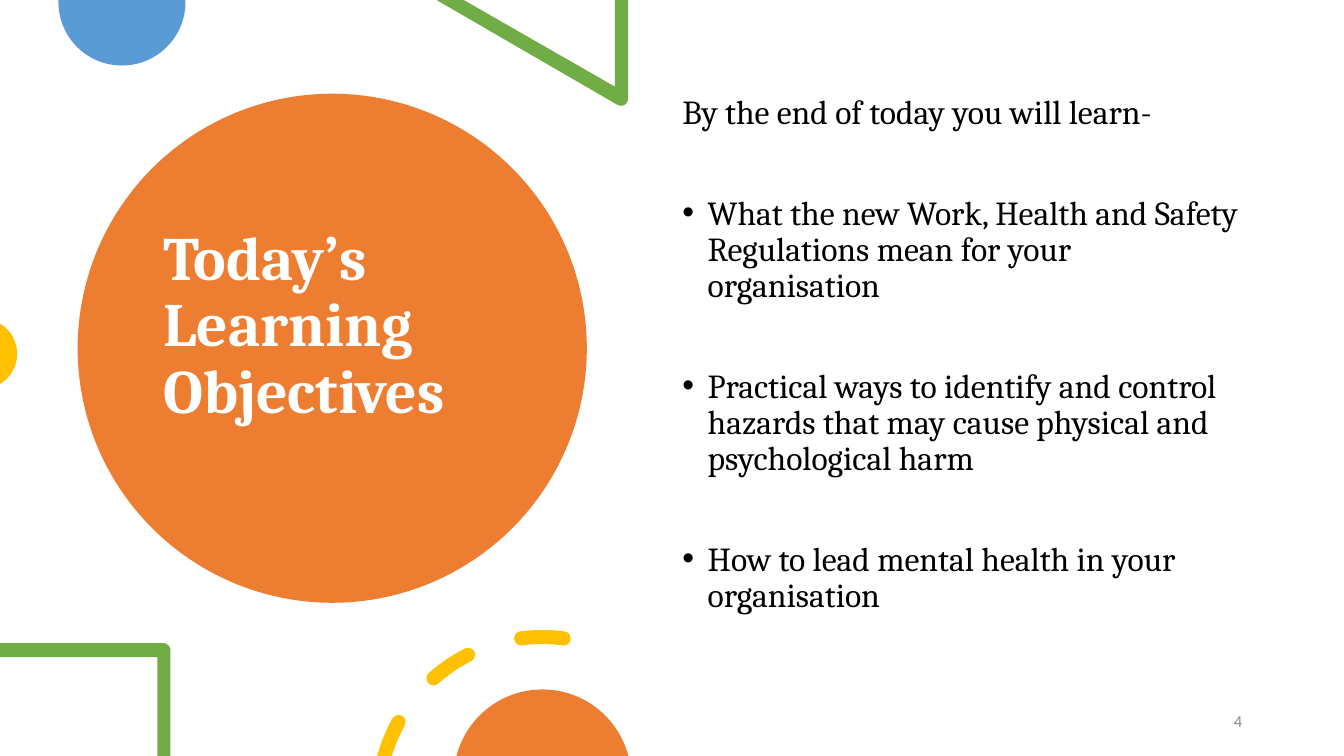
from dataclasses import dataclass
from math import cos, radians, sin, tan

from lxml import etree
from pptx import Presentation
from pptx import util as u
from pptx.dml.color import RGBColor
from pptx.enum import shapes, text
from pptx.oxml.ns import qn

COLUMNS, ROWS = 13.33, 7.5
CELL = u.Inches(1)


@dataclass(frozen=True)
class Theme:
    """Colours, fonts and type sizes of the slide."""
    orange: str = "ED7D31"
    blue: str = "5B9BD5"
    green: str = "70AD47"
    yellow: str = "FFC000"
    white: str = "FFFFFF"
    black: str = "000000"
    grey: str = "8C8C8C"
    serif: str = "Cambria"
    sans: str = "Calibri"
    title: int = 44
    body: int = 24
    number: int = 12


THEME = Theme()


def cells(*counts):
    """Turn grid counts into slide lengths."""
    return [round(count * CELL) for count in counts]


def paint(shape, colour):
    """Give a shape a plain fill with no line or shadow."""
    shape.shadow.inherit = False
    shape.fill.solid()
    shape.fill.fore_color.rgb = RGBColor.from_string(colour)
    shape.line.fill.background()


def polar(centre, radius, angle, lead=0):
    """Find a point on a circle, moved along its tangent by a share of the radius."""
    turn = radians(angle)
    return (centre[0] + radius * (cos(turn) - lead * sin(turn)),
            centre[1] + radius * (sin(turn) + lead * cos(turn)))


def arc(centre, radius, start, end):
    """List a start point and Bezier curves that split where the circle meets its axes."""
    low, high = sorted((start, end))
    splits = [angle for angle in range(-360, 721, 90) if low < angle < high]
    angles = sorted([start, *splits, end], reverse=start > end)
    items = [polar(centre, radius, start)]
    for first, last in zip(angles, angles[1:]):
        lead = 4 / 3 * tan(radians(last - first) / 4)
        items.append([polar(centre, radius, first, lead),
                      polar(centre, radius, last, -lead),
                      polar(centre, radius, last)])
    return items


def outline(page, box, contours, colour):
    """Draw closed contours of points and curves, relative to the box, as one shape."""
    left, top = box[:2]
    builder = None
    for start, *items in contours:
        origin = cells(left + start[0], top + start[1])
        if builder is None:
            builder = page.shapes.build_freeform(*origin)
        else:
            builder.move_to(*origin)
        points = [point for item in items
                  for point in (item if isinstance(item, list) else [item])]
        builder.add_line_segments([cells(left + x, top + y) for x, y in points], close=True)
    shape = builder.convert_to_shape()
    track = next(shape._element.iter(qn("a:path")))
    lines = iter(track.findall(qn("a:lnTo")))
    for item in (item for contour in contours for item in contour[1:]):
        line = next(lines)
        if isinstance(item, list):
            curve = etree.Element(qn("a:cubicBezTo"))
            line.addprevious(curve)
            for part in (line, next(lines), next(lines)):
                curve.append(part[0])
                track.remove(part)
    paint(shape, colour)


def dash(centre, radius, width, start, end):
    """Outline one curved dash with round ends."""
    half = width / 2
    return (cut_dash(centre, radius, width, start, start, end)
            + arc(polar(centre, radius, start), half, start + 180, start + 360)[1:])


def cut_dash(centre, radius, width, outer_start, inner_start, end):
    """Outline a curved dash with a round end and an open start."""
    half = width / 2
    return (arc(centre, radius + half, outer_start, end)
            + arc(polar(centre, radius, end), half, end, end + 180)[1:]
            + arc(centre, radius - half, end, inner_start)[1:])


def text_box(page, box, lines, font, size, colour, anchor=text.MSO_ANCHOR.TOP):
    """Place wrapped paragraphs in a box and return its text frame."""
    frame = page.shapes.add_textbox(*cells(*box)).text_frame
    frame.word_wrap = True
    frame.vertical_anchor = anchor
    for index, line in enumerate(lines):
        para = frame.paragraphs[0] if index == 0 else frame.add_paragraph()
        para.text = line
        para.font.name = font
        para.font.size = u.Pt(size)
        para.font.color.rgb = RGBColor.from_string(colour)
    return frame


def decorations(page, box):
    """Draw the cut-off shapes around the edges of the left half."""
    height = box[3]
    outline(page, box, [[(1.84, 0)] + arc((1.21, 0.02), 0.63, 0, 180) + [(0.58, 0)]], THEME.blue)
    outline(page, box, [[(6.23, 0)] + arc((6.16, 0.98), 0.07, 0, 120)
                        + [(4.33, 0), (4.6, 0), (6.1, 0.86), (6.1, 0)]], THEME.green)
    outline(page, box, [arc((-0.18, 3.51), 0.35, -59, 59)], THEME.yellow)
    outline(page, box, [[(0, 6.38)] + arc((1.62, 6.45), 0.07, -90, 0)
                        + [(1.69, height), (1.56, height), (1.56, 6.52), (0, 6.52)]], THEME.green)
    ring = ((5.38, 7.95), 1.63, 0.14)
    outline(page, box, [cut_dash(*ring, 195.35, 196.77, 208.9),
                        dash(*ring, 228.5, 243.1),
                        dash(*ring, 262.6, 277.4)], THEME.yellow)
    outline(page, box, [arc((5.38, 7.72), 0.88, 194.5, 345.5)], THEME.orange)


def title_disc(page, box):
    """Draw the large disc with the slide title on it."""
    left, top, width, height = box
    disc = page.shapes.add_shape(shapes.MSO_SHAPE.OVAL, *cells(*box))
    paint(disc, THEME.orange)
    frame = text_box(page, (left + 0.75, top + 0.42, width - 1.51, height - 0.6),
                     ["Today’s Learning Objectives"], THEME.serif, THEME.title,
                     THEME.white, text.MSO_ANCHOR.MIDDLE)
    frame.margin_bottom = u.Inches(0.72)
    para = frame.paragraphs[0]
    para.font.bold = True
    para.line_spacing = 0.9


def objectives(page, box):
    """Write the lead-in and the bulleted objectives."""
    lines = ["By the end of today you will learn-",
             "What the new Work, Health and Safety Regulations mean for your organisation",
             "Practical ways to identify and control hazards that may cause physical "
             "and psychological harm",
             "How to lead mental health in your organisation"]
    frame = text_box(page, box, lines, THEME.serif, THEME.body, THEME.black)
    lead, *bullets = frame.paragraphs
    lead.line_spacing = 0.9
    lead.space_before = u.Pt(10)
    for para in bullets:
        para.line_spacing = 0.9
        para.space_before = u.Pt(45.8)
        properties = para._p.get_or_add_pPr()
        properties.set("marL", str(u.Inches(0.25)))
        properties.set("indent", str(-u.Inches(0.25)))
        font = etree.Element(qn("a:buFont"), typeface="Arial")
        mark = etree.Element(qn("a:buChar"), char="•")
        properties.find(qn("a:spcBef")).addnext(font)
        font.addnext(mark)


def page_number(page, box):
    """Write the slide number at the right of its box."""
    frame = text_box(page, box, ["4"], THEME.sans, THEME.number, THEME.grey,
                     text.MSO_ANCHOR.MIDDLE)
    para = frame.paragraphs[0]
    para.alignment = text.PP_ALIGN.RIGHT
    para.space_after = u.Pt(6)


def main():
    """Build and save the learning objectives slide."""
    deck = Presentation()
    deck.slide_width, deck.slide_height = cells(COLUMNS, ROWS)
    page = deck.slides.add_slide(deck.slide_layouts[6])
    title_disc(page, (0.77, 0.93, 5.05, 5.05))
    decorations(page, (0, 0, COLUMNS / 2, ROWS))
    objectives(page, (6.67, 0.9, 5.75, 5.35))
    page_number(page, (11.49, 6.95, 0.93, 0.4))
    deck.save("out.pptx")


if __name__ == "__main__":
    main()
